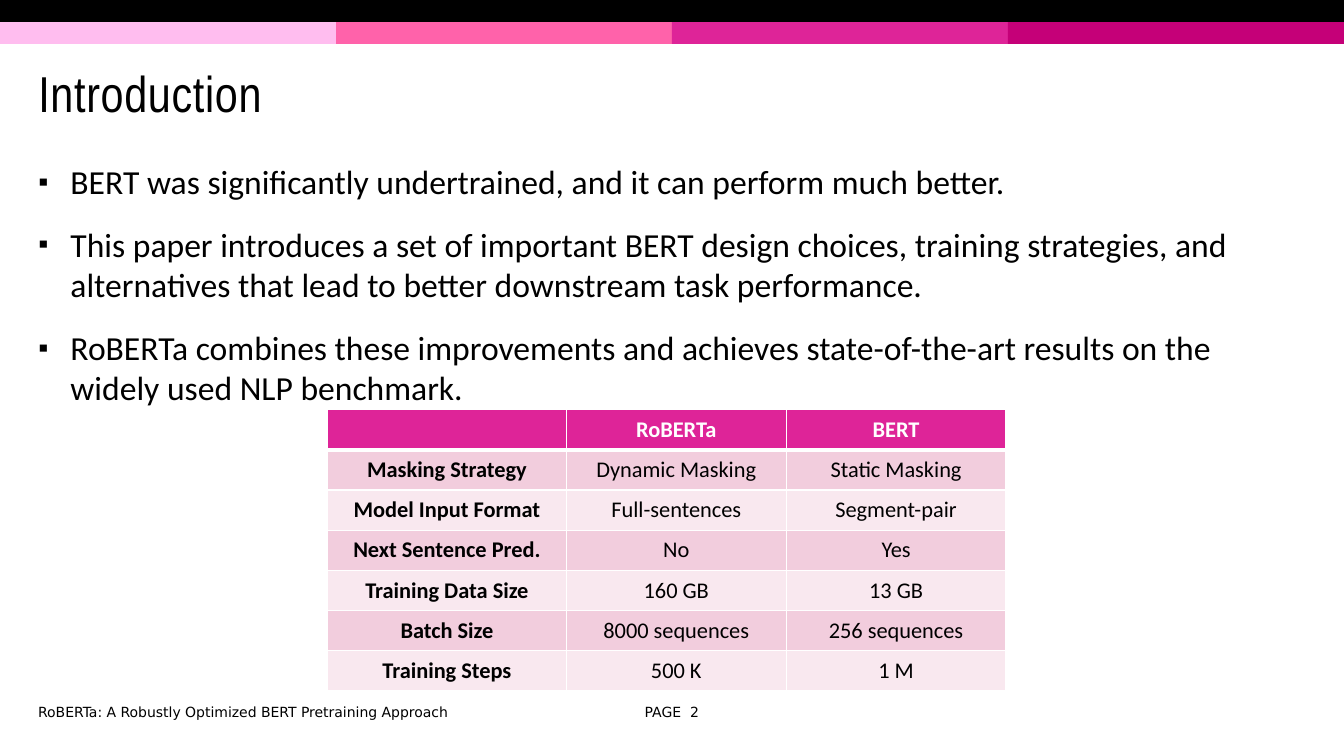
"""Build the introduction slide comparing RoBERTa with BERT."""
from dataclasses import dataclass

from lxml.etree import SubElement
from pptx import Presentation
from pptx.dml.color import RGBColor
from pptx.enum.shapes import MSO_SHAPE
from pptx.enum.text import MSO_ANCHOR, MSO_AUTO_SIZE, PP_ALIGN
from pptx.oxml.ns import qn
from pptx.util import Pt

WIDTH, HEIGHT = 960, 540
MARGIN = 20.16
CONTENT_WIDTH = 910.8
STRIPE = 15.7
BLACK, WHITE, MAGENTA = "000000", "FFFFFF", "DE2498"
BANDS = ("F2CDDD", "F9E8EF")
STRIPE_COLOURS = ("FFBDEF", "FF62AA", MAGENTA, "C50078")
COLUMN_WIDTHS = (170.6, 157, 157)
ROW_HEIGHT = 28.72

POINTS = (
    "BERT was significantly undertrained, and it can perform much better.",
    "This paper introduces a set of important BERT design choices, training strategies, "
    "and alternatives that lead to better downstream task performance.",
    "RoBERTa combines these improvements and achieves state-of-the-art results on the "
    "widely used NLP benchmark.",
)
COMPARISON = (
    ("", "RoBERTa", "BERT"),
    ("Masking Strategy", "Dynamic Masking", "Static Masking"),
    ("Model Input Format", "Full-sentences", "Segment-pair"),
    ("Next Sentence Pred.", "No", "Yes"),
    ("Training Data Size", "160 GB", "13 GB"),
    ("Batch Size", "8000 sequences", "256 sequences"),
    ("Training Steps", "500 K", "1 M"),
)


@dataclass(frozen=True)
class Bar:
    left: float
    top: float
    width: float
    colour: str


@dataclass(frozen=True)
class Footer:
    text: str
    left: float
    width: float
    align: PP_ALIGN


BARS = [
    Bar(i * WIDTH / 4, STRIPE, WIDTH / 4, colour) for i, colour in enumerate(STRIPE_COLOURS)
] + [Bar(0, 0, WIDTH, BLACK)]
FOOTERS = (
    Footer("RoBERTa: A Robustly Optimized BERT Pretraining Approach", MARGIN, 411.8, PP_ALIGN.LEFT),
    Footer("PAGE  2", 439.9, 79.9, PP_ALIGN.CENTER),
)


def paint(target, colour: str) -> None:
    target.solid()
    target.fore_color.rgb = RGBColor.from_string(colour)


def style(paragraph, font: str, size: float, colour: str = BLACK, bold: bool = False) -> None:
    for run in paragraph.runs:
        run.font.name = font
        run.font.size = Pt(size)
        run.font.bold = bold
        paint(run.font.fill, colour)


def place(shape, left: float, top: float, width: float, height: float) -> None:
    shape.left, shape.top, shape.width, shape.height = map(Pt, (left, top, width, height))


def draw_bar(slide, bar: Bar) -> None:
    stripe = slide.shapes.add_shape(
        MSO_SHAPE.RECTANGLE, Pt(bar.left), Pt(bar.top), Pt(bar.width), Pt(STRIPE)
    )
    stripe.shadow.inherit = False
    paint(stripe.fill, bar.colour)
    stripe.line.fill.background()


def draw_footer(slide, footer: Footer) -> None:
    frame = slide.shapes.add_textbox(
        Pt(footer.left), Pt(499), Pt(footer.width), Pt(19.4)
    ).text_frame
    frame.word_wrap = True
    frame.vertical_anchor = MSO_ANCHOR.MIDDLE
    frame.text = footer.text
    frame.paragraphs[0].alignment = footer.align
    style(frame.paragraphs[0], "DejaVu Sans", 10)


def write_title(title) -> None:
    place(title, MARGIN, 33.8, CONTENT_WIDTH, 70.6)
    frame = title.text_frame
    frame.auto_size = MSO_AUTO_SIZE.NONE
    frame.vertical_anchor = MSO_ANCHOR.MIDDLE
    frame.text = "Introduction"
    heading = frame.paragraphs[0]
    heading.alignment = PP_ALIGN.LEFT
    heading.line_spacing = 0.85
    style(heading, "Arial Narrow", 36)
    heading.runs[0].font._element.set("spc", "50")


def add_bullet(paragraph) -> None:
    properties = paragraph._p.get_or_add_pPr()
    properties.set("marL", str(Pt(23)))
    properties.set("indent", str(Pt(-23)))
    bullet_colour = SubElement(properties, qn("a:buClr"))
    SubElement(bullet_colour, qn("a:srgbClr"), val=BLACK)
    SubElement(properties, qn("a:buSzPct"), val="85000")
    SubElement(properties, qn("a:buFont"), typeface="Arial")
    SubElement(properties, qn("a:buChar"), char="▪")


def write_points(body) -> None:
    place(body, MARGIN, 111.6, CONTENT_WIDTH, 362.2)
    frame = body.text_frame
    frame.auto_size = MSO_AUTO_SIZE.NONE
    frame.vertical_anchor = MSO_ANCHOR.TOP
    frame.text = "\n".join(POINTS)
    for i, point in enumerate(frame.paragraphs):
        add_bullet(point)
        point.space_before = Pt(8 if i else 0)
        point.space_after = Pt(8)
        style(point, "Calibri", 24)


def add_borders(cell, top: float, bottom: float) -> None:
    properties = cell._tc.get_or_add_tcPr()
    for side, width in (("L", 1), ("R", 1), ("T", top), ("B", bottom)):
        border = SubElement(properties, qn(f"a:ln{side}"), w=str(Pt(width)))
        fill = SubElement(border, qn("a:solidFill"))
        SubElement(fill, qn("a:srgbClr"), val=WHITE)


def draw_comparison(slide) -> None:
    table = slide.shapes.add_table(
        len(COMPARISON), len(COLUMN_WIDTHS), Pt(234), Pt(292.5),
        Pt(sum(COLUMN_WIDTHS)), Pt(ROW_HEIGHT * len(COMPARISON)),
    ).table
    for column, width in zip(table.columns, COLUMN_WIDTHS):
        column.width = Pt(width)
    for r, values in enumerate(COMPARISON):
        table.rows[r].height = Pt(ROW_HEIGHT)
        header = r == 0
        for c, value in enumerate(values):
            cell = table.cell(r, c)
            add_borders(cell, top=3 if r == 1 else 1, bottom=3 if header else 1)
            paint(cell.fill, MAGENTA if header else BANDS[(r - 1) % 2])
            cell.margin_top = cell.margin_bottom = Pt(2)
            cell.vertical_anchor = MSO_ANCHOR.MIDDLE
            cell.text_frame.text = value
            entry = cell.text_frame.paragraphs[0]
            entry.alignment = PP_ALIGN.CENTER
            style(entry, "Calibri", 16, WHITE if header else BLACK, header or c == 0)


def main() -> None:
    deck = Presentation()
    deck.slide_width, deck.slide_height = Pt(WIDTH), Pt(HEIGHT)
    slide = deck.slides.add_slide(deck.slide_layouts[1])
    paint(slide.background.fill, WHITE)
    for bar in BARS:
        draw_bar(slide, bar)
    write_title(slide.shapes.title)
    write_points(slide.placeholders[1])
    for footer in FOOTERS:
        draw_footer(slide, footer)
    draw_comparison(slide)
    deck.save("out.pptx")


if __name__ == "__main__":
    main()
